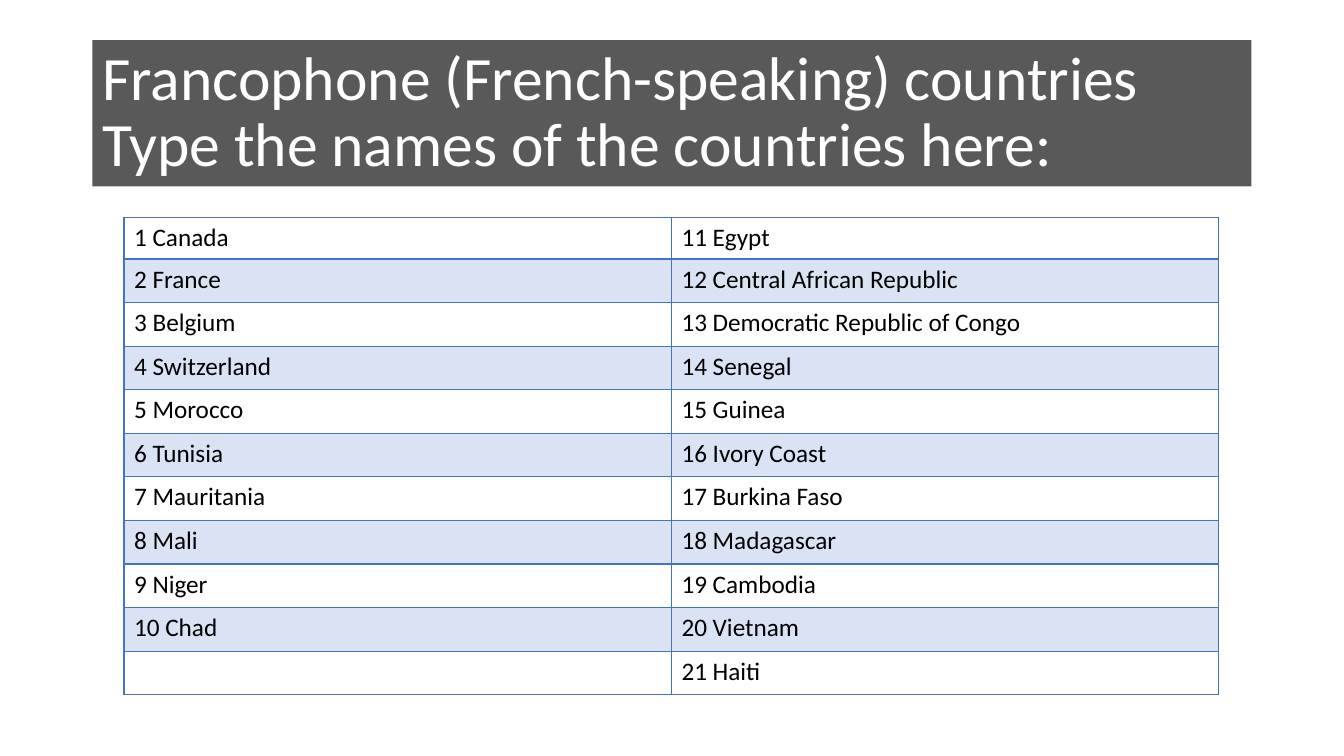
"""Build a slide that lists French-speaking countries in a table."""
from dataclasses import dataclass

from lxml import etree
from pptx import Presentation
from pptx import util as u
from pptx.dml import color
from pptx.enum import shapes, text
from pptx.oxml import ns


@dataclass(frozen=True)
class Theme:
    font: str = "Calibri"
    head: int = 44
    body: int = 18
    white: str = "FFFFFF"
    black: str = "000000"
    gray: str = "595959"
    blue: str = "4472C4"
    pale: str = "DAE3F3"
    thin: int = 1
    thick: int = 2


THEME = Theme()
TITLE = "Francophone (French-speaking) countries\vType the names of the countries here:"
LEFT = ["Canada", "France", "Belgium", "Switzerland", "Morocco", "Tunisia",
        "Mauritania", "Mali", "Niger", "Chad"]
RIGHT = ["Egypt", "Central African Republic", "Democratic Republic of Congo",
         "Senegal", "Guinea", "Ivory Coast", "Burkina Faso", "Madagascar",
         "Cambodia", "Vietnam", "Haiti"]


def rgb(code):
    return color.RGBColor.from_string(code)


def write(frame, words, size=THEME.body, ink=THEME.black, space=1.0):
    para = frame.paragraphs[0]
    para.text = words
    para.alignment = text.PP_ALIGN.LEFT
    para.line_spacing = space
    for run in para.runs:
        run.font.name = THEME.font
        run.font.size = u.Pt(size)
        run.font.color.rgb = rgb(ink)


def banner(slide, words, left, top, width, height):
    box = slide.shapes.add_shape(shapes.MSO_SHAPE.RECTANGLE, u.Pt(left),
                                 u.Pt(top), u.Pt(width), u.Pt(height))
    box.shadow.inherit = False
    box.fill.solid()
    box.fill.fore_color.rgb = rgb(THEME.gray)
    box.line.fill.background()
    box.text_frame.word_wrap = True
    box.text_frame.vertical_anchor = text.MSO_ANCHOR.MIDDLE
    write(box.text_frame, words, size=THEME.head, ink=THEME.white, space=0.9)


def border(cell, side, width):
    props = cell._tc.get_or_add_tcPr()
    line = etree.SubElement(props, ns.qn(f"a:ln{side}"), w=str(u.Pt(width)))
    fill = etree.SubElement(line, ns.qn("a:solidFill"))
    etree.SubElement(fill, ns.qn("a:srgbClr"), val=THEME.blue)


def style(cell, row):
    for side in "LRTB":
        under = (row, side) in [(0, "B"), (1, "T")]
        border(cell, side, THEME.thick if under else THEME.thin)
    if row % 2:
        cell.fill.solid()
        cell.fill.fore_color.rgb = rgb(THEME.pale)
    else:
        cell.fill.background()


def grid(slide, lists, left, top, width, first, pitch):
    count = max(map(len, lists))
    height = first + pitch * (count - 1)
    table = slide.shapes.add_table(count, len(lists), u.Pt(left), u.Pt(top),
                                   u.Pt(width), u.Pt(height)).table
    table.first_row = table.horz_banding = False
    for row, line in enumerate(table.rows):
        line.height = u.Pt(pitch if row else first)
    start = 1
    for col, names in enumerate(lists):
        for row in range(count):
            cell = table.cell(row, col)
            style(cell, row)
            if row < len(names):
                write(cell.text_frame, f"{start + row} {names[row]}")
        start += len(names)


def main():
    deck = Presentation()
    deck.slide_width, deck.slide_height = u.Pt(960), u.Pt(540)
    slide = deck.slides.add_slide(deck.slide_layouts[6])
    banner(slide, TITLE, left=66, top=28.75, width=828, height=104.4)
    grid(slide, [LEFT, RIGHT], left=88.6, top=155.5, width=782,
         first=29.5, pitch=31.15)
    deck.save("out.pptx")


if __name__ == "__main__":
    main()
